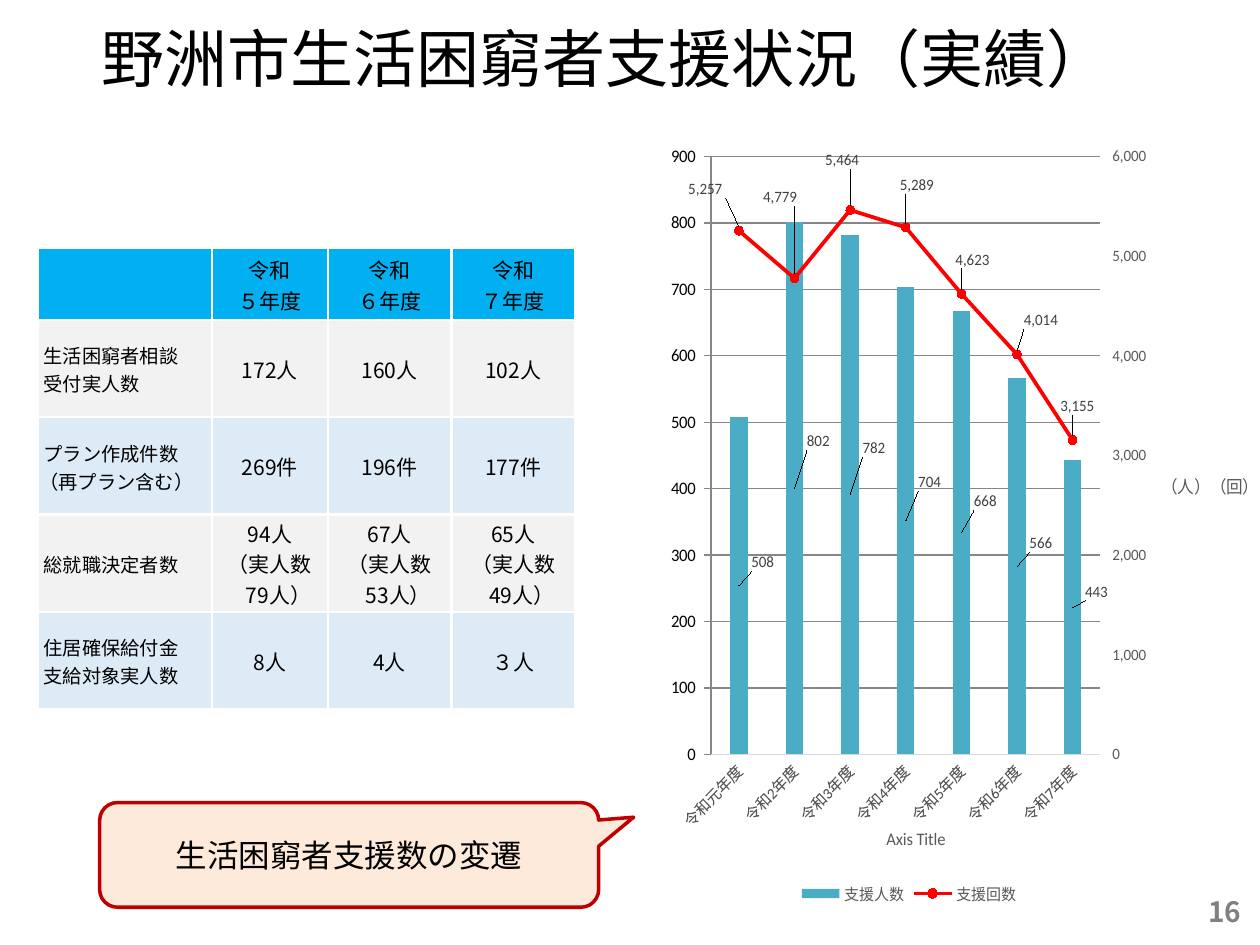
from lxml.etree import SubElement
from pptx import Presentation
from pptx.chart.axis import ValueAxis
from pptx.chart.data import CategoryChartData
from pptx.dml.color import RGBColor
from pptx.enum.chart import (XL_CHART_TYPE, XL_LABEL_POSITION, XL_LEGEND_POSITION,
                             XL_MARKER_STYLE, XL_TICK_MARK)
from pptx.enum.shapes import MSO_SHAPE
from pptx.enum.text import MSO_ANCHOR, PP_ALIGN
from pptx.oxml import parse_xml
from pptx.oxml.ns import nsdecls, qn
from pptx.util import Cm, Pt

GOTHIC = "Noto Sans CJK JP"
NUMBER = "#,##0_ "
BAR_LABEL_SHIFTS = [(0.04, -0.03), (0.04, -0.06), (0.04, -0.06), (0.04, -0.05),
                    (0.04, -0.04), (0.04, -0.03), (0.04, -0.02)]
LINE_LABEL_SHIFTS = [(-0.05, -0.03), (-0.02, -0.08), (-0.01, -0.04), (0.02, -0.03),
                     (0.02, -0.02), (0.04, -0.02), (0.01, -0.02)]
TABLE_ROWS = [
    ["", "令和\n５年度", "令和\n６年度", "令和\n７年度"],
    [" 生活困窮者相談\n 受付実人数", "172人", "160人", "102人"],
    [" プラン作成件数\n（再プラン含む）", "269件", "196件", "177件"],
    [" 総就職決定者数", "94人\n（実人数\n79人）", "67人\n（実人数\n53人）", "65人\n（実人数\n49人）"],
    [" 住居確保給付金\n 支給対象実人数", "8人", "4人", "３人"],
]


def color(value):
    """Return the colour for a hex string."""
    return RGBColor.from_string(value)


def lengths(*values):
    """Convert centimetres to slide lengths."""
    return [Cm(value) for value in values]


def add_span(para, text, size, tone="000000", font=GOTHIC, bold=False):
    """Add one formatted run to a paragraph."""
    span = para.add_run()
    span.text = text
    span.font.size = Pt(size)
    span.font.bold = bold
    span.font.name = font
    span.font.color.rgb = color(tone)
    SubElement(span.font._element, qn("a:ea")).set("typeface", GOTHIC)


def add_title(page, box):
    """Place and format the title placeholder."""
    title = page.shapes.title
    title.left, title.top, title.width, title.height = lengths(*box)
    title.text_frame.vertical_anchor = MSO_ANCHOR.MIDDLE
    para = title.text_frame.paragraphs[0]
    para.alignment = PP_ALIGN.CENTER
    add_span(para, "野洲市生活困窮者支援状況（実績）", 36)


def add_page_number(page, box):
    """Add the page number at the lower right."""
    frame = page.shapes.add_textbox(*lengths(*box)).text_frame
    frame.word_wrap = True
    frame.vertical_anchor = MSO_ANCHOR.MIDDLE
    frame.paragraphs[0].alignment = PP_ALIGN.RIGHT
    add_span(frame.paragraphs[0], "16", 16, "808080", bold=True)


def add_callout(page, box):
    """Add the callout that points to the chart."""
    callout = page.shapes.add_shape(MSO_SHAPE.ROUNDED_RECTANGULAR_CALLOUT, *lengths(*box))
    for index, value in enumerate((0.57, -0.36, 0.17)):
        callout.adjustments[index] = value
    callout.shadow.inherit = False
    callout.fill.solid()
    callout.fill.fore_color.rgb = color("FDEADA")
    callout.line.color.rgb = color("C00000")
    callout.line.width = Pt(2)
    callout.text_frame.vertical_anchor = MSO_ANCHOR.MIDDLE
    para = callout.text_frame.paragraphs[0]
    para.alignment = PP_ALIGN.CENTER
    add_span(para, "生活困窮者支援数の変遷", 18, font="Calibri")


def fill_cell(cell, text, fill, size, alignment):
    """Fill, border and write one table cell."""
    cell.margin_left = cell.margin_right = cell.margin_top = Cm(0.03)
    cell.margin_bottom = 0
    cell.vertical_anchor = MSO_ANCHOR.MIDDLE
    properties = cell._tc.get_or_add_tcPr()
    for side in ("lnL", "lnR", "lnT", "lnB"):
        properties.append(parse_xml(
            f'<a:{side} {nsdecls("a")} w="{Pt(1.5)}"><a:solidFill>'
            f'<a:srgbClr val="FFFFFF"/></a:solidFill></a:{side}>'))
    cell.fill.solid()
    cell.fill.fore_color.rgb = color(fill)
    for index, line in enumerate(text.split("\n") if text else []):
        para = cell.text_frame.add_paragraph() if index else cell.text_frame.paragraphs[0]
        para.alignment = alignment
        if index == 2:
            para._p.get_or_add_pPr().set("marL", str(Cm(0.35)))
        add_span(para, line, size)


def add_results_table(page, box):
    """Add the table of yearly results."""
    table = page.shapes.add_table(len(TABLE_ROWS), 4, *lengths(*box)).table
    for column, width in zip(table.columns, lengths(3.51, 2.34, 2.49, 2.49)):
        column.width = width
    for row_index, texts in enumerate(TABLE_ROWS):
        table.rows[row_index].height = Cm(1.96 if row_index else 1.45)
        fill = ("DDEBF7", "F2F2F2")[row_index % 2] if row_index else "00B0F0"
        for column_index, text in enumerate(texts):
            size, alignment = (12, PP_ALIGN.CENTER) if column_index else (11, PP_ALIGN.LEFT)
            fill_cell(table.cell(row_index, column_index), text, fill, size, alignment)


def set_layout(element, index, **values):
    """Insert a manual chart layout as the given child."""
    for old in element.findall(qn("c:layout")):
        element.remove(old)
    layout = parse_xml(f'<c:layout {nsdecls("c")}><c:manualLayout/></c:layout>')
    for name, value in values.items():
        SubElement(layout[0], qn(f"c:{name}")).set("val", str(value))
    element.insert(index, layout)


def style_font(font, size=9, tone="595959"):
    """Format chart text."""
    font.size = Pt(size)
    font.name = "Calibri"
    font.bold = False
    font.color.rgb = color(tone)


def style_axis(axis, title, x, y):
    """Format an axis and place its horizontal title."""
    axis.major_tick_mark = axis.minor_tick_mark = XL_TICK_MARK.NONE
    style_font(axis.tick_labels.font)
    axis.has_title = True
    frame = axis.axis_title.text_frame
    body = frame._txBody.find(qn("a:bodyPr"))
    body.set("rot", "0")
    body.set("vert", "horz")
    add_span(frame.paragraphs[0], title, 10, "595959", "Calibri")
    set_layout(axis.axis_title._element, 1, xMode="edge", yMode="edge", x=x, y=y)


def style_value_axis(axis, top, step, title, x, y):
    """Scale and format a value axis."""
    style_axis(axis, title, x, y)
    axis.minimum_scale, axis.maximum_scale, axis.major_unit = 0, top, step
    axis.tick_labels.number_format = NUMBER
    axis.tick_labels.number_format_is_linked = False
    axis.format.line.fill.background()


def add_labels(series, position, shifts):
    """Label each point, moved by a share of the chart size."""
    labels = series.data_labels
    labels.show_value = True
    labels.number_format = NUMBER
    labels.number_format_is_linked = False
    style_font(labels.font, tone="404040")
    for index, (x, y) in enumerate(shifts):
        label = series.points[index].data_label
        style_font(label.font, tone="404040")
        label.position = position
        set_layout(label._dLbl, 1, x=x, y=y)


def move_to_line(chart):
    """Move the second series to a line on a right axis, and return that axis."""
    area = chart._chartSpace.chart.plotArea
    bars = area.find(qn("c:barChart"))
    series = bars.findall(qn("c:ser"))[1]
    for flag in series.findall(qn("c:invertIfNegative")):
        series.remove(flag)
    line = parse_xml(
        f'<c:lineChart {nsdecls("c")}><c:grouping val="stacked"/><c:varyColors val="0"/>'
        '<c:marker val="1"/><c:axId val="5001"/><c:axId val="5002"/></c:lineChart>')
    line.insert(2, series)
    bars.addnext(line)
    last = area.findall(qn("c:valAx"))[-1]
    for tag, own, other, hidden, side, crosses in (
            ("valAx", 5002, 5001, 0, "r", "max"), ("catAx", 5001, 5002, 1, "b", "autoZero")):
        last.addnext(parse_xml(
            f'<c:{tag} {nsdecls("c")}><c:axId val="{own}"/><c:scaling>'
            f'<c:orientation val="minMax"/></c:scaling><c:delete val="{hidden}"/>'
            f'<c:axPos val="{side}"/><c:tickLblPos val="nextTo"/>'
            f'<c:crossAx val="{other}"/><c:crosses val="{crosses}"/></c:{tag}>'))
    return ValueAxis(area.findall(qn("c:valAx"))[-1])


def add_support_chart(page, box):
    """Add the chart of people supported and support counts."""
    data = CategoryChartData(number_format=NUMBER)
    data.categories = [f"令和{year}年度" for year in "元234567"]
    data.add_series("支援人数", [508, 802, 782, 704, 668, 566, 443])
    data.add_series("支援回数", [5257, 4779, 5464, 5289, 4623, 4014, 3155])
    chart = page.shapes.add_chart(XL_CHART_TYPE.COLUMN_CLUSTERED, *lengths(*box), data).chart
    chart.has_title = False
    style_font(chart.font, 10, "000000")
    right_axis = move_to_line(chart)
    set_layout(chart._chartSpace.chart.plotArea, 0, layoutTarget="inner", xMode="edge",
               yMode="edge", x=0.19, y=0.03, w=0.61, h=0.77)
    style_axis(chart.category_axis, "Axis Title", 0.46, 0.89)
    chart.category_axis.format.line.color.rgb = color("D9D9D9")
    style_value_axis(chart.value_axis, 900, 100, "（人）", 0.04, 0.45)
    style_value_axis(right_axis, 6000, 1000, "（回）", 0.89, 0.43)
    right_axis.major_tick_mark = XL_TICK_MARK.OUTSIDE
    grid = chart.value_axis.major_gridlines.format.line
    grid.color.rgb = color("D9D9D9")
    grid.width = Pt(0.75)
    bars, line = chart.plots
    bars.gap_width = 219
    bars.vary_by_categories = False
    people, counts = bars.series[0], line.series[0]
    people.format.fill.solid()
    people.format.fill.fore_color.rgb = color("4BACC6")
    counts.smooth = False
    counts.format.line.color.rgb = color("FF0000")
    counts.format.line.width = Pt(2.25)
    counts.marker.style = XL_MARKER_STYLE.CIRCLE
    counts.marker.size = 5
    counts.marker.format.fill.solid()
    counts.marker.format.fill.fore_color.rgb = color("FF0000")
    counts.marker.format.line.color.rgb = color("FF0000")
    add_labels(people, XL_LABEL_POSITION.CENTER, BAR_LABEL_SHIFTS)
    add_labels(counts, XL_LABEL_POSITION.ABOVE, LINE_LABEL_SHIFTS)
    chart.has_legend = True
    chart.legend.position = XL_LEGEND_POSITION.BOTTOM
    chart.legend.include_in_layout = False
    style_font(chart.legend.font)


def main():
    """Build and save the slide."""
    deck = Presentation()
    deck.slide_width, deck.slide_height = lengths(25.4, 19.05)
    page = deck.slides.add_slide(deck.slide_layouts[5])
    add_title(page, (1.27, -0.69, 21.89, 3.68))
    add_page_number(page, (18.54, 18.01, 6.73, 0.74))
    add_callout(page, (2.01, 16.18, 10.06, 2.11))
    add_support_chart(page, (11.89, 2.69, 13.56, 15.65))
    add_results_table(page, (0.76, 5, 10.83, 9.29))
    deck.save("out.pptx")


if __name__ == "__main__":
    main()
